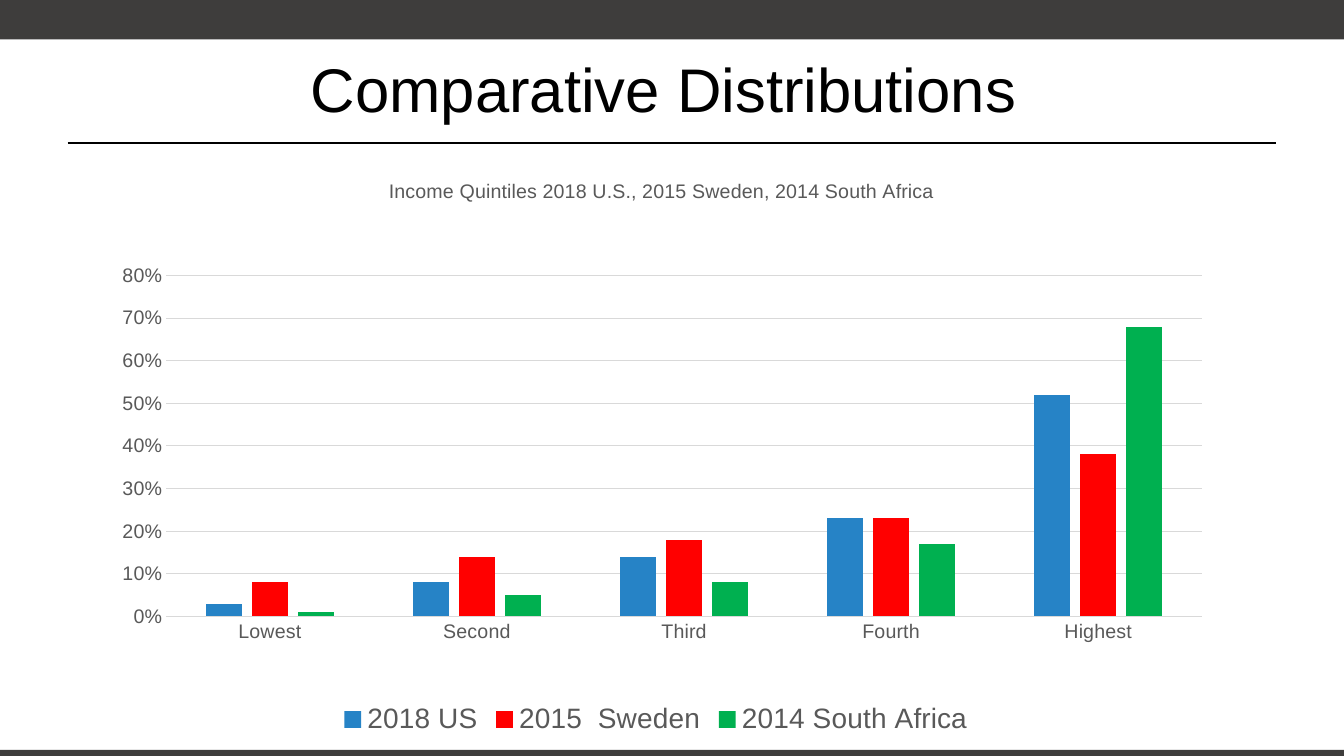
from lxml import etree
from pptx import Presentation, util as u
from pptx.chart.data import CategoryChartData
from pptx.dml.color import RGBColor
from pptx.enum import chart as ch, shapes, text
from pptx.oxml import parse_xml
from pptx.oxml.ns import nsdecls, qn

INK, GRAY, RULE, DARK = "000000", "595959", "D9D9D9", "3E3D3C"
CATS = ["Lowest", "Second", "Third", "Fourth", "Highest"]
SERIES = [
    ("2018 US", "2683C6", [0.03, 0.08, 0.14, 0.23, 0.52]),
    ("2015  Sweden", "FF0000", [0.08, 0.14, 0.18, 0.23, 0.38]),
    ("2014 South Africa", "00B050", [0.01, 0.05, 0.08, 0.17, 0.68]),
]


def paint(item, **looks):
    """Set fill, line and font colours from hex strings, and other font values."""
    for key, val in looks.items():
        if key == "fill":
            item.fill.solid()
            item.fill.fore_color.rgb = RGBColor.from_string(val)
        elif key == "color":
            item.color.rgb = RGBColor.from_string(val)
        else:
            setattr(item, key, val)


def layout(**shares):
    """Build a manual chart layout from shares of the chart's size."""
    tags = [("layoutTarget", "inner")] if "w" in shares else []
    tags += [("xMode", "edge"), ("yMode", "edge"), *shares.items()]
    body = "".join(f'<c:{tag} val="{val}"/>' for tag, val in tags)
    return parse_xml(f"<c:layout {nsdecls('c')}><c:manualLayout>{body}"
                     "</c:manualLayout></c:layout>")


prs = Presentation()
prs.slide_width, prs.slide_height = u.Inches(13.33), u.Inches(7.5)
wide, high = prs.slide_width, prs.slide_height
edge = u.Inches(0.67)
slide = prs.slides.add_slide(prs.slide_layouts[6])

# Bands at the top and bottom edges
foot = u.Inches(7.44)
for top, tall in [(0, u.Inches(0.39)), (foot, high - foot)]:
    band = slide.shapes.add_shape(shapes.MSO_SHAPE.RECTANGLE, 0, top, wide, tall)
    paint(band, fill=DARK)
    band.line.fill.background()
    band.shadow.inherit = False

# Heading and the rule below it
y = u.Inches(1.42)
rule = slide.shapes.add_connector(
    shapes.MSO_CONNECTOR.STRAIGHT, edge, y, wide - edge, y)
paint(rule.line, color=INK, width=u.Pt(1.25))
etree.SubElement(rule._element.spPr, qn("a:effectLst"))

head = slide.shapes.add_textbox(edge, u.Inches(0.25), u.Inches(12), u.Inches(1.25))
frame = head.text_frame
frame.word_wrap = True
frame.vertical_anchor = text.MSO_ANCHOR.MIDDLE
frame.text = "Comparative Distributions "
para = frame.paragraphs[0]
para.alignment = text.PP_ALIGN.CENTER
paint(para.runs[0].font, name="Arial", size=u.Pt(44), color=INK)

# Chart
data = CategoryChartData(number_format="0%")
data.categories = CATS
for name, _, vals in SERIES:
    data.add_series(name, vals)
chart = slide.shapes.add_chart(
    ch.XL_CHART_TYPE.COLUMN_CLUSTERED, edge, u.Inches(1.5),
    u.Inches(11.67), u.Inches(5.85), data).chart
paint(chart.font, name="Arial", size=u.Pt(10), color=INK)
small = dict(name="Arial", size=u.Pt(14), color=GRAY, bold=False)

label = chart.chart_title.text_frame
label.text = "Income Quintiles 2018 U.S., 2015 Sweden, 2014 South Africa"
paint(label.paragraphs[0].runs[0].font, **small)
title = chart.chart_title._element
for old in title.findall(qn("c:layout")):
    title.remove(old)
title.find(qn("c:tx")).addnext(layout(x=0.27, y=0.04))
chart.chart_title.include_in_layout = False

plot = chart.plots[0]
plot.gap_width, plot.overlap, plot.vary_by_categories = 219, -27, False
for bars, (_, hue, _) in zip(plot.series, SERIES):
    paint(bars.format, fill=hue)
    bars.invert_if_negative = False

area = chart._chartSpace.chart.plotArea
for old in area.findall(qn("c:layout")):
    area.remove(old)
area.insert(0, layout(x=0.084, y=0.211, w=0.88, h=0.578))

cat, val = chart.category_axis, chart.value_axis
for axis in (cat, val):
    axis.major_tick_mark = axis.minor_tick_mark = ch.XL_TICK_MARK.NONE
    paint(axis.tick_labels.font, **small)
val.minimum_scale, val.maximum_scale, val.major_unit = 0, 0.8, 0.1
val.tick_labels.number_format = "0%"
val.tick_labels.number_format_is_linked = False
val.format.line.fill.background()
for part in (cat, val.major_gridlines):
    paint(part.format.line, color=RULE, width=u.Pt(0.75))

chart.has_legend = True
chart.legend.position = ch.XL_LEGEND_POSITION.BOTTOM
chart.legend.include_in_layout = False
paint(chart.legend.font, name="Arial", size=u.Pt(20), color=GRAY)

prs.save("out.pptx")
